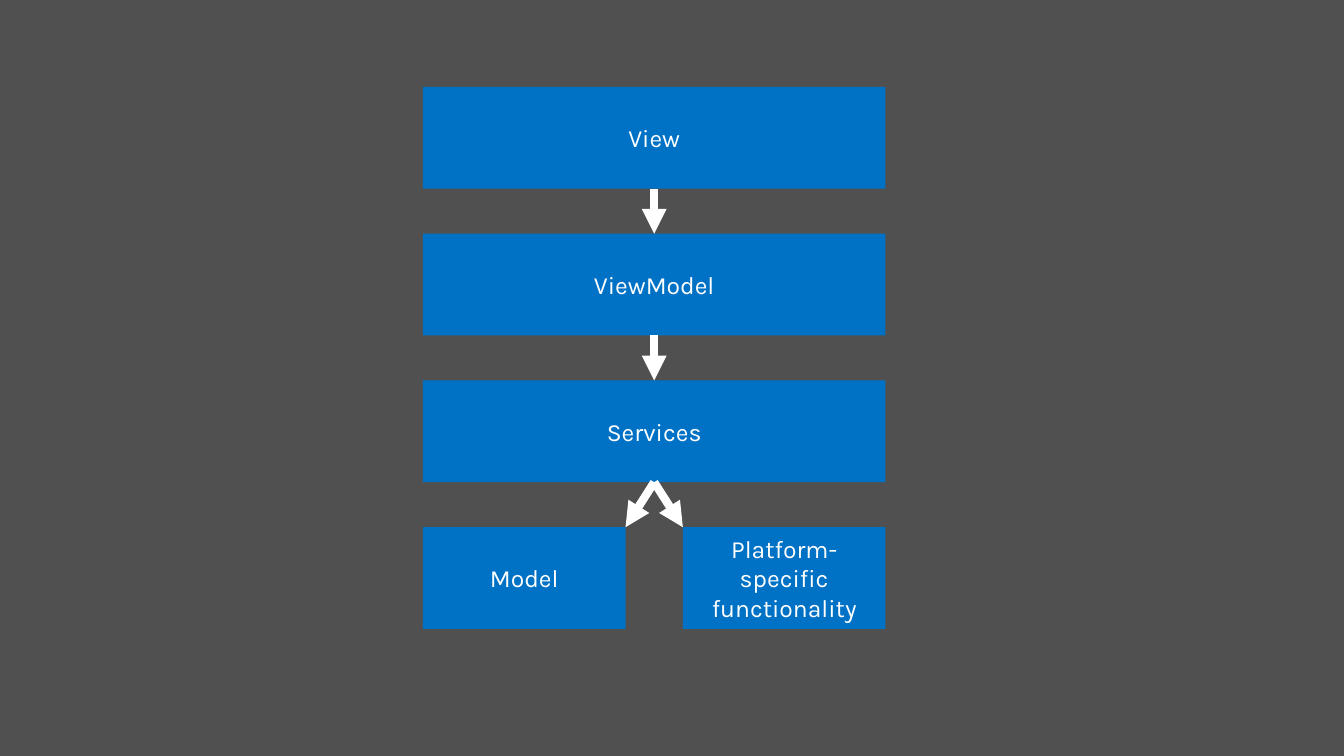
from dataclasses import dataclass

from pptx import Presentation
from pptx.dml.color import RGBColor
from pptx.enum.shapes import MSO_CONNECTOR as Line, MSO_SHAPE as Kind
from pptx.enum.text import MSO_ANCHOR as Anchor, PP_ALIGN as Align
from pptx.oxml.ns import qn
from pptx.shapes.autoshape import Shape
from pptx.shapes.connector import Connector
from pptx.slide import Slide
from pptx.util import Inches, Pt

GREY = RGBColor(0x50, 0x50, 0x50)
BLUE = RGBColor(0x00, 0x72, 0xC6)
WHITE = RGBColor(0xFF, 0xFF, 0xFF)
FONT = "Karla"

LEFT, TOP = 4.28, 0.88
WIDE, HALF, HIGH = 4.68, 2.05, 1.03
STEP = 1.485
BOTTOM, UPPER = 2, 0


@dataclass(frozen=True)
class Box:
    lines: tuple[str, ...]
    row: int
    left: float = LEFT
    width: float = WIDE


LAYERS = (
    Box(("View",), 0),
    Box(("ViewModel",), 1),
    Box(("Services",), 2),
)
PARTS = (
    Box(("Model",), 3, LEFT, HALF),
    Box(("Platform-specific", "functionality"), 3, LEFT + WIDE - HALF, HALF),
)


def draw_box(slide: Slide, box: Box) -> Shape:
    shape = slide.shapes.add_shape(
        Kind.RECTANGLE,
        Inches(box.left), Inches(TOP + box.row * STEP),
        Inches(box.width), Inches(HIGH),
    )
    shape.shadow.inherit = False
    shape.fill.solid()
    shape.fill.fore_color.rgb = BLUE
    shape.line.fill.background()
    frame = shape.text_frame
    frame.word_wrap = True
    frame.vertical_anchor = Anchor.MIDDLE
    for i, line in enumerate(box.lines):
        para = frame.add_paragraph() if i else frame.paragraphs[0]
        para.alignment = Align.CENTER
        run = para.add_run()
        run.text = line
        run.font.name = FONT
        run.font.size = Pt(18)
        run.font.color.rgb = WHITE
    return shape


def draw_arrow(slide: Slide, start: Shape, x: int, y: int) -> Connector:
    arrow = slide.shapes.add_connector(Line.STRAIGHT, 0, 0, x, y)
    arrow.begin_connect(start, BOTTOM)
    arrow.line.color.rgb = WHITE
    arrow.line.width = Pt(6)
    tail = arrow.line._get_or_add_ln().makeelement(qn("a:tailEnd"), {"type": "triangle"})
    arrow.line._get_or_add_ln().append(tail)
    props = arrow._element.spPr
    props.append(props.makeelement(qn("a:effectLst"), {}))
    return arrow


def main() -> None:
    deck = Presentation()
    deck.slide_width, deck.slide_height = Inches(13.6), Inches(7.65)
    slide = deck.slides.add_slide(deck.slide_layouts[6])
    slide.background.fill.solid()
    slide.background.fill.fore_color.rgb = GREY

    layers = [draw_box(slide, box) for box in LAYERS]
    model, native = [draw_box(slide, box) for box in PARTS]

    for upper, lower in zip(layers, layers[1:]):
        arrow = draw_arrow(slide, upper, lower.left + lower.width // 2, lower.top)
        arrow.end_connect(lower, UPPER)
    for x in (model.left + model.width, native.left):
        draw_arrow(slide, layers[-1], x, model.top)

    deck.save("out.pptx")


if __name__ == "__main__":
    main()
